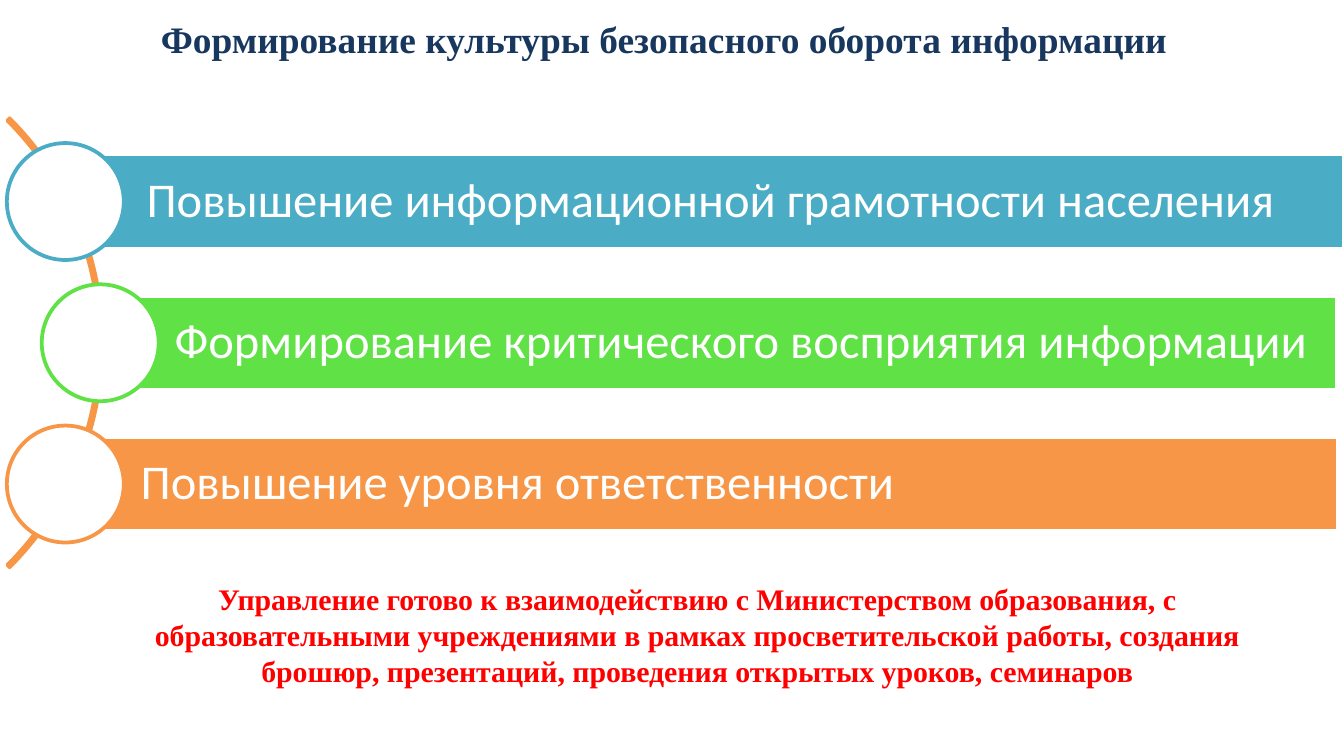
"""Build a slide on the culture of safe information handling."""
from pptx import Presentation
from pptx.dml.color import RGBColor
from pptx.enum.shapes import MSO_SHAPE
from pptx.enum.text import MSO_ANCHOR, MSO_AUTO_SIZE, PP_ALIGN
from pptx.util import Cm, Pt

ARC, RECT, OVAL = MSO_SHAPE.BLOCK_ARC, MSO_SHAPE.RECTANGLE, MSO_SHAPE.OVAL
LEFT, CENTER = PP_ALIGN.LEFT, PP_ALIGN.CENTER
TOP, MIDDLE = MSO_ANCHOR.TOP, MSO_ANCHOR.MIDDLE
NO_FIT = MSO_AUTO_SIZE.NONE

WHITE = RGBColor(0xFF, 0xFF, 0xFF)
NAVY = RGBColor(0x17, 0x37, 0x5E)
RED = RGBColor(0xFF, 0x00, 0x00)
TEAL = RGBColor(0x4B, 0xAC, 0xC6)
GREEN = RGBColor(0x60, 0xE1, 0x46)
ORANGE = RGBColor(0xF7, 0x96, 0x46)
SERIF, SANS = "Times New Roman", "Calibri"

TITLE = "Формирование культуры безопасного оборота информации"
GOALS = [
    ("Повышение информационной грамотности населения", TEAL, 1.35, 24.05, 0.13),
    ("Формирование критического восприятия информации", GREEN, 1.88, 23.39, 0.79),
    ("Повышение уровня ответственности", ORANGE, 1.24, 24.05, 0.13),
]
NOTE = (
    "Управление готово к взаимодействию с Министерством образования, "
    "с образовательными учреждениями в рамках просветительской работы, "
    "создания брошюр, презентаций, проведения открытых уроков, семинаров"
)

MID, STEP = 6.48, 2.67
BAR, DOT, RING = 1.78, 2.21, 12
PADS = (0.25, 0.13, 0.25, 0.13)
BAR_PADS = (1.42, 0.18, 0.18, 0.18)


def write(shape, text, size, color, font=SERIF, bold=True, align=CENTER,
          anchor=MIDDLE, pads=PADS, space=1.0):
    frame = shape.text_frame
    frame.word_wrap = True
    frame.auto_size = NO_FIT
    frame.vertical_anchor = anchor
    (frame.margin_left, frame.margin_top,
     frame.margin_right, frame.margin_bottom) = map(Cm, pads)
    para = frame.paragraphs[0]
    para.alignment = align
    para.line_spacing = space
    run = para.add_run()
    run.text = text
    face = run.font
    face.name, face.size, face.bold = font, Pt(size), bold
    face.color.rgb = color


def draw(slide, kind, box, fill, line):
    shape = slide.shapes.add_shape(kind, *map(Cm, box))
    shape.shadow.inherit = False
    if fill is None:
        shape.fill.background()
    else:
        shape.fill.solid()
        shape.fill.fore_color.rgb = fill
    shape.line.color.rgb = line
    shape.line.width = Pt(2)
    return shape


def main():
    deck = Presentation()
    deck.slide_width, deck.slide_height = Cm(25.4), Cm(14.29)
    slide = deck.slides.add_slide(deck.slide_layouts[5])

    title = slide.shapes.title
    title.left, title.top, title.width, title.height = map(
        Cm, (1.63, 0.18, 21.84, 1.12))
    write(title, TITLE, 20, NAVY, anchor=TOP)

    note = slide.shapes.add_textbox(*map(Cm, (2.46, 10.03, 21.44, 3.94)))
    write(note, NOTE, 16, RED)

    ring = draw(slide, ARC, (-10.06, MID - RING / 2, RING, RING), None, ORANGE)
    for i, value in enumerate((189, 27, 0.005)):
        ring.adjustments[i] = value

    for i, (text, color, left, width, dot) in enumerate(GOALS):
        mid = MID + (i - 1) * STEP
        bar = draw(slide, RECT, (left, mid - BAR / 2, width, BAR), color, WHITE)
        write(bar, text, 26, WHITE, font=SANS, bold=False, align=LEFT,
              pads=BAR_PADS, space=0.9)
        draw(slide, OVAL, (dot, mid - DOT / 2, DOT, DOT), WHITE, color)

    deck.save("out.pptx")


if __name__ == "__main__":
    main()
